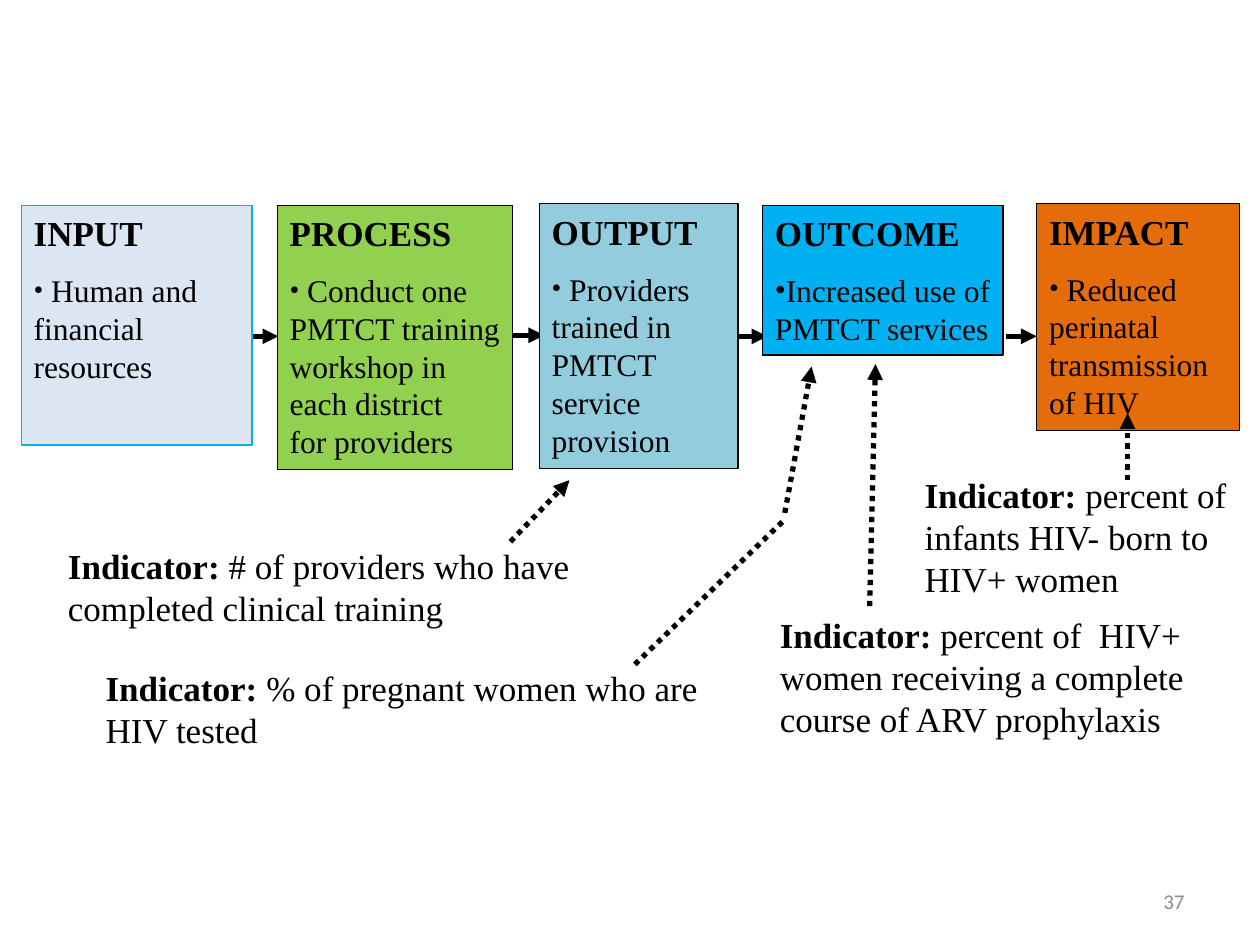
from lxml.etree import SubElement
from pptx import Presentation
from pptx.dml.color import RGBColor
from pptx.enum.dml import MSO_LINE
from pptx.enum.shapes import MSO_CONNECTOR, MSO_SHAPE
from pptx.enum.text import MSO_ANCHOR, PP_ALIGN
from pptx.oxml.ns import qn
from pptx.util import Cm, Pt

SERIF = "Times New Roman"
BLACK = "000000"

STAGES = [
    ("INPUT", " Human and financial resources",
     (0.43, 4.14, 4.65, 4.83), "DCE6F2", "00B0F0"),
    ("PROCESS", " Conduct one PMTCT training workshop in each district \vfor providers",
     (5.59, 4.14, 4.75, 5.33), "92D050", BLACK),
    ("OUTPUT", " Providers trained in PMTCT service provision",
     (10.87, 4.11, 4.01, 5.33), "93CDDD", BLACK),
    ("OUTCOME", "Increased use of PMTCT services",
     (15.37, 4.14, 4.85, 3.02), "00B0F0", BLACK),
    ("IMPACT", " Reduced perinatal transmission of HIV",
     (20.9, 4.11, 4.09, 4.57), "E46C0A", BLACK),
]
INDICATORS = [
    (" # of providers who have completed clinical training", (1.12, 10.85, 11.02, 1.96)),
    (" % of pregnant women who are HIV tested", (1.88, 13.31, 12.98, 1.96)),
    (" percent of  HIV+ women receiving a complete course of ARV prophylaxis",
     (15.47, 12.24, 8.69, 2.82)),
    (" percent of  infants HIV- born to HIV+ women", (18.39, 9.42, 7.21, 2.82)),
]
FLOW_ARROWS = [
    (5.08, 6.78, 5.61, 6.78),
    (10.34, 6.76, 10.97, 6.76),
    (14.83, 6.78, 15.47, 6.78),
    (20.27, 6.78, 20.9, 6.78),
]
INDICATOR_ARROWS = [
    (10.29, 10.92, 11.48, 9.68),
    (15.82, 10.34, 16.36, 7.39),
    (17.53, 12.22, 17.65, 7.34),
    (22.73, 9.68, 22.73, 8.33),
]
INDICATOR_BEND = (15.77, 10.52, 12.75, 13.44)


def color(value):
    return RGBColor.from_string(value)


def lengths(values):
    return [Cm(value) for value in values]


def format_span(span, size, bold=False, font=SERIF, fill=BLACK):
    span.font.name = font
    span.font.size = Pt(size)
    span.font.bold = bold
    span.font.color.rgb = color(fill)


def add_bullet(para, percent):
    properties = para._p.get_or_add_pPr()
    SubElement(properties, qn("a:buSzPct"), val=str(percent * 1000))
    SubElement(properties, qn("a:buFont"), typeface=SERIF)
    SubElement(properties, qn("a:buChar"), char="•")


def add_line(page, ends, dotted=False, arrow=True):
    connector = page.shapes.add_connector(MSO_CONNECTOR.STRAIGHT, *lengths(ends))
    connector.line.color.rgb = color(BLACK)
    connector.line.width = Pt(3)
    if dotted:
        connector.line.dash_style = MSO_LINE.ROUND_DOT
    properties = connector._element.spPr
    if arrow:
        SubElement(properties.find(qn("a:ln")), qn("a:tailEnd"), type="triangle")
    SubElement(properties, qn("a:effectLst"))


def add_stage(page, title, activity, place, fill, border):
    box = page.shapes.add_shape(MSO_SHAPE.RECTANGLE, *lengths(place))
    box.shadow.inherit = False
    box.fill.solid()
    box.fill.fore_color.rgb = color(fill)
    box.line.color.rgb = color(border)
    box.line.width = Pt(0.75)
    frame = box.text_frame
    frame.word_wrap = True
    frame.vertical_anchor = MSO_ANCHOR.TOP
    heading, item = frame.paragraphs[0], frame.add_paragraph()
    heading.text = title
    item.text = activity
    item.space_before = Pt(10)
    add_bullet(item, 89 if activity.startswith(" ") else 100)
    for para, size in ((heading, 20), (item, 18)):
        para.alignment = PP_ALIGN.LEFT
        for span in para.runs:
            format_span(span, size, bold=para is heading)


def add_text(page, text, place):
    box = page.shapes.add_textbox(*lengths(place))
    box.text_frame.word_wrap = True
    box.text_frame.text = text
    return box


def add_indicator(page, text, place):
    para = add_text(page, "Indicator:", place).text_frame.paragraphs[0]
    format_span(para.runs[0], 20, bold=True)
    span = para.add_run()
    span.text = text
    format_span(span, 20)


def add_page_number(page):
    box = add_text(page, "37", (18.21, 17.65, 5.92, 1.02))
    box.text_frame.vertical_anchor = MSO_ANCHOR.MIDDLE
    para = box.text_frame.paragraphs[0]
    para.alignment = PP_ALIGN.RIGHT
    format_span(para.runs[0], 12, font="Calibri", fill="8C8C8C")


def main():
    deck = Presentation()
    deck.slide_width, deck.slide_height = Cm(25.4), Cm(19.05)
    page = deck.slides.add_slide(deck.slide_layouts[6])
    for ends in FLOW_ARROWS:
        add_line(page, ends)
    for stage in STAGES:
        add_stage(page, *stage)
    for indicator in INDICATORS:
        add_indicator(page, *indicator)
    for ends in INDICATOR_ARROWS:
        add_line(page, ends, dotted=True)
    add_line(page, INDICATOR_BEND, dotted=True, arrow=False)
    add_page_number(page)
    deck.save("out.pptx")


if __name__ == "__main__":
    main()
